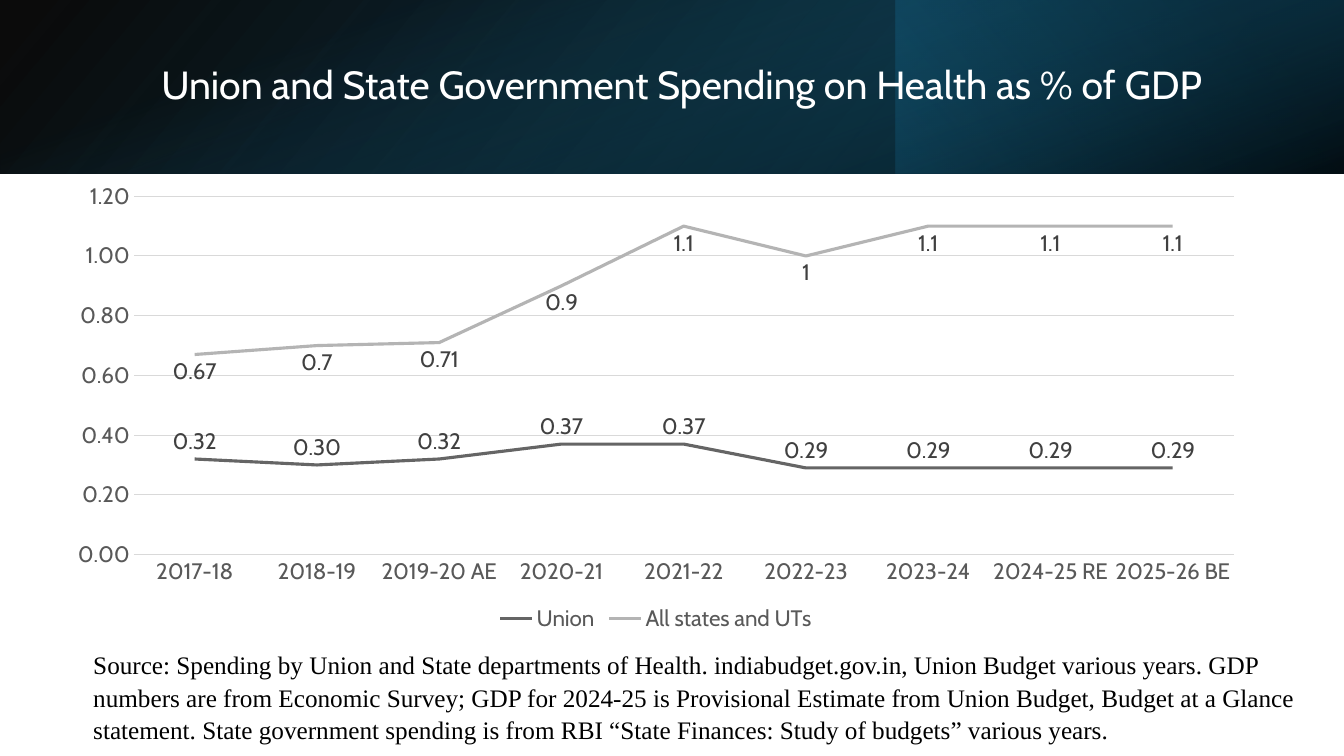
from dataclasses import dataclass

from lxml import etree
from pptx import Presentation
from pptx.chart.data import CategoryChartData
from pptx.dml.color import RGBColor
from pptx.enum.chart import XL_CHART_TYPE, XL_LABEL_POSITION, XL_LEGEND_POSITION, XL_TICK_MARK
from pptx.enum.shapes import MSO_SHAPE
from pptx.enum.text import MSO_ANCHOR, PP_ALIGN
from pptx.oxml import parse_xml
from pptx.oxml.ns import nsdecls, qn
from pptx.util import Inches, Pt

LINE = XL_CHART_TYPE.LINE
ABOVE, BELOW = XL_LABEL_POSITION.ABOVE, XL_LABEL_POSITION.BELOW
LEGEND_BOTTOM = XL_LEGEND_POSITION.BOTTOM
NO_TICK = XL_TICK_MARK.NONE
RECTANGLE = MSO_SHAPE.RECTANGLE
MIDDLE, TOP = MSO_ANCHOR.MIDDLE, MSO_ANCHOR.TOP
LEFT = PP_ALIGN.LEFT

WIDTH, HEIGHT = 13.33, 7.5
BANNER_HEIGHT = 0.23 * HEIGHT


@dataclass(frozen=True)
class Theme:
    font: str = "Cabin"
    source_font: str = "Times New Roman"
    title_size: int = 28
    source_size: int = 18
    chart_size: int = 16
    white: str = "FFFFFF"
    black: str = "000000"
    navy: str = "0B3041"
    deep_teal: str = "104862"
    teal: str = "156082"
    axis_text: str = "595959"
    label_text: str = "404040"
    grid: str = "D9D9D9"
    union: str = "656565"
    states: str = "B4B4B4"


THEME = Theme()

TITLE = "Union and State Government Spending on Health as % of GDP"
SOURCE = (
    "Source: Spending by Union and State departments of Health. indiabudget.gov.in, "
    "Union Budget various years. GDP numbers are from Economic Survey; GDP for 2024-25 is "
    "Provisional Estimate from Union Budget, Budget at a Glance statement. State government "
    "spending is from RBI “State Finances: Study of budgets” various years."
)
YEARS = ["2017-18", "2018-19", "2019-20 AE", "2020-21", "2021-22",
         "2022-23", "2023-24", "2024-25 RE", "2025-26 BE"]
# name, values, colour, label position, label number format
SERIES = [
    ("Union", [0.32, 0.3, 0.32, 0.37, 0.37, 0.29, 0.29, 0.29, 0.29],
     THEME.union, ABOVE, "0.00"),
    ("All states and UTs", [0.67, 0.7, 0.71, 0.9, 1.1, 1, 1.1, 1.1, 1.1],
     THEME.states, BELOW, "General"),
]


def style_font(font, size, color, name=THEME.font):
    font.size = Pt(size)
    font.name = name
    font.bold = False
    font.color.rgb = RGBColor.from_string(color)


def style_line(line, color, width):
    line.color.rgb = RGBColor.from_string(color)
    line.width = Pt(width)


def add_gradient(s, box, stops, angle, rotation=0):
    """Add a rectangle whose stops are (position %, colour, opacity %)."""
    sp = s.shapes.add_shape(RECTANGLE, *map(Inches, box))
    sp.shadow.inherit = False
    sp.rotation = rotation
    sp.line.fill.background()
    gradient = parse_xml(f'<a:gradFill {nsdecls("a")} rotWithShape="1"><a:gsLst/></a:gradFill>')
    for position, color, opacity in stops:
        stop = etree.SubElement(gradient[0], qn("a:gs"), pos=str(position * 1000))
        rgb = etree.SubElement(stop, qn("a:srgbClr"), val=color)
        etree.SubElement(rgb, qn("a:alpha"), val=str(opacity * 1000))
    etree.SubElement(gradient, qn("a:lin"), ang=str(angle * 60000), scaled="0")
    sp.element.spPr.find(qn("a:prstGeom")).addnext(gradient)
    return sp


def add_banner(s, box):
    x, y, w, h = box
    base = add_gradient(s, box, [(0, THEME.black, 96), (100, THEME.deep_teal, 100)], 140)
    base.element.spPr.find(qn("a:xfrm")).set("flipH", "1")
    add_gradient(s, (x + w * 2 / 3, y, w / 3, h),
                 [(19, THEME.navy, 68), (100, THEME.teal, 79)], 320, rotation=180)
    add_gradient(s, (x + (w - h) / 2, y + (h - w) / 2, h, w),
                 [(23, THEME.teal, 0), (99, THEME.black, 74)], 340, rotation=90)

    title = s.shapes.title
    title.element.getparent().append(title.element)  # bring in front of the gradients
    title.left, title.top = Inches(x + 0.1125 * w), Inches(y + 0.22 * h)
    title.width, title.height = Inches(0.824 * w), Inches(0.56 * h)
    tf = title.text_frame
    tf.text = TITLE
    tf.word_wrap = True
    tf.vertical_anchor = MIDDLE
    p = tf.paragraphs[0]
    p.alignment = LEFT
    p.line_spacing = 0.9
    style_font(p.font, THEME.title_size, THEME.white)


def add_spending_chart(s, box):
    data = CategoryChartData()
    data.categories = YEARS
    for name, values, *_ in SERIES:
        data.add_series(name, values)
    chart = s.shapes.add_chart(LINE, *map(Inches, box), data).chart
    chart.has_title = False
    style_font(chart.font, THEME.chart_size, THEME.black)

    chart.has_legend = True
    chart.legend.position = LEGEND_BOTTOM
    chart.legend.include_in_layout = False
    style_font(chart.legend.font, THEME.chart_size, THEME.axis_text)

    for axis in (chart.category_axis, chart.value_axis):
        axis.major_tick_mark = axis.minor_tick_mark = NO_TICK
        style_font(axis.tick_labels.font, THEME.chart_size, THEME.axis_text)
    style_line(chart.category_axis.format.line, THEME.grid, 0.75)
    values_axis = chart.value_axis
    values_axis.minimum_scale, values_axis.maximum_scale = 0, 1.2
    values_axis.major_unit = 0.2
    values_axis.format.line.fill.background()
    style_line(values_axis.major_gridlines.format.line, THEME.grid, 0.75)
    values_axis.tick_labels.number_format = "0.00"
    values_axis.tick_labels.number_format_is_linked = False

    plot = chart.plots[0]
    plot.vary_by_categories = False
    for series, (_, _, color, position, number_format) in zip(plot.series, SERIES):
        series.smooth = False
        style_line(series.format.line, color, 2.25)
        labels = series.data_labels
        labels.show_value = True
        labels.position = position
        labels.number_format = number_format
        labels.number_format_is_linked = False
        style_font(labels.font, THEME.chart_size, THEME.label_text)


def add_source(s, box):
    tf = s.shapes.add_textbox(*map(Inches, box)).text_frame
    tf.text = SOURCE
    tf.word_wrap = True
    tf.vertical_anchor = TOP
    p = tf.paragraphs[0]
    p.line_spacing = 1.07
    p.space_after = Pt(8)
    style_font(p.font, THEME.source_size, THEME.black, THEME.source_font)


def main():
    prs = Presentation()
    prs.slide_width, prs.slide_height = Inches(WIDTH), Inches(HEIGHT)
    s = prs.slides.add_slide(prs.slide_layouts.get_by_name("Title Only"))
    add_banner(s, (0, 0, WIDTH, BANNER_HEIGHT))
    add_spending_chart(s, (0.04 * WIDTH, BANNER_HEIGHT, 0.896 * WIDTH, 0.612 * HEIGHT))
    add_source(s, (0.062 * WIDTH, 0.85 * HEIGHT, 0.925 * WIDTH, 0.142 * HEIGHT))
    prs.save("out.pptx")


if __name__ == "__main__":
    main()
